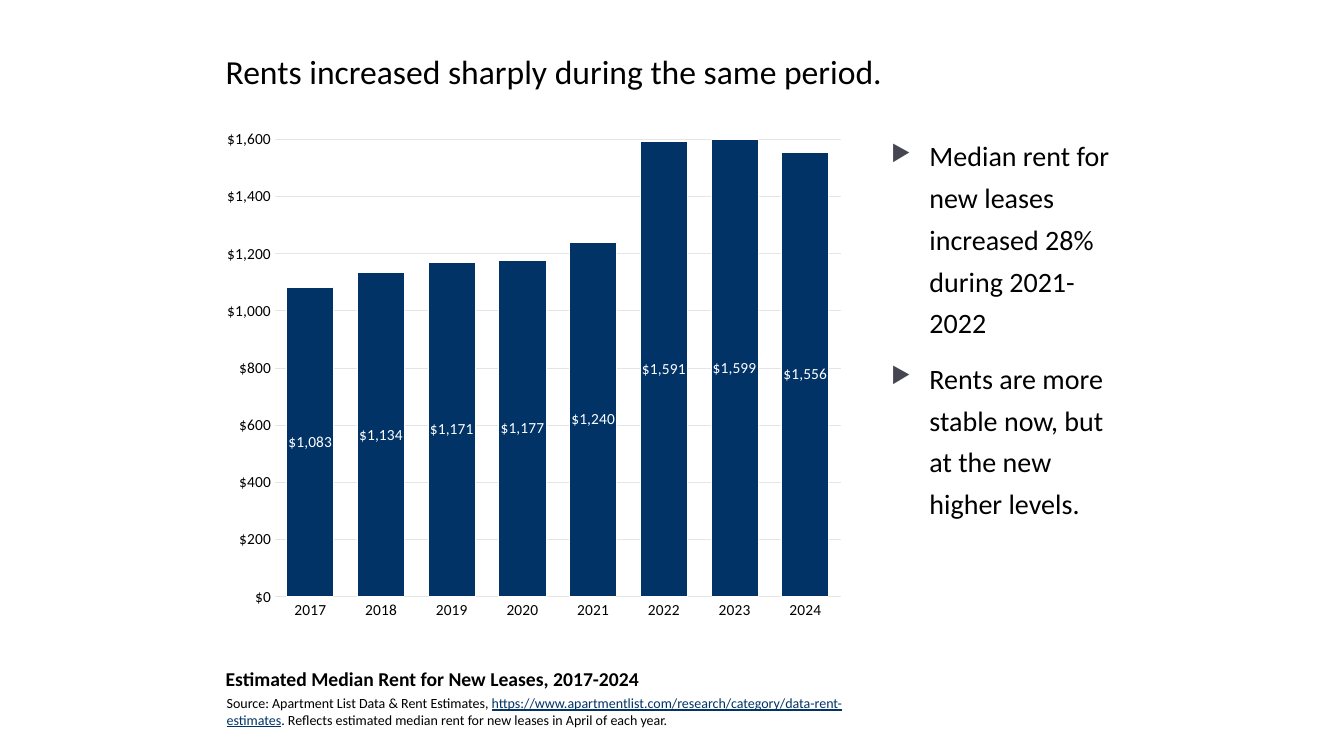
import pptx
import pptx.chart.data
import pptx.dml.color
import pptx.enum.chart
import pptx.enum.text
import pptx.oxml
import pptx.oxml.ns
import pptx.util
from lxml import etree

Inches = pptx.util.Inches
Pt = pptx.util.Pt
qn = pptx.oxml.ns.qn


def color(code):
    return pptx.dml.color.RGBColor.from_string(code)


class Deck:
    face = "Calibri"
    ink = "000000"
    navy = "023366"
    white = "FFFFFF"
    grid = "E5E5E5"
    mark = "464653"

    def __init__(self):
        self.show = pptx.Presentation()
        self.show.slide_width = Inches(13.33)
        self.show.slide_height = Inches(7.5)
        self.slide = self.show.slides.add_slide(self.show.slide_layouts[6])

    def style(self, font, size, shade=None, bold=False):
        font.name = self.face
        font.size = Pt(size)
        font.bold = bold
        font.color.rgb = color(shade or self.ink)

    def frame(self, spot):
        box = self.slide.shapes.add_textbox(*map(Inches, spot))
        box.text_frame.word_wrap = True
        return box.text_frame

    def text(self, spot, words, size, bold=False, space=1.0, middle=False):
        frame = self.frame(spot)
        if middle:
            frame.vertical_anchor = pptx.enum.text.MSO_ANCHOR.MIDDLE
        para = frame.paragraphs[0]
        para.text = words
        para.line_spacing = space
        self.style(para.font, size, bold=bold)

    def source(self, spot, parts, size):
        para = self.frame(spot).paragraphs[0]
        for words, link in parts:
            run = para.add_run()
            run.text = words
            self.style(run.font, size, self.navy if link else self.ink)
            run.font.underline = link

    def bullets(self, spot, items, size):
        frame = self.frame(spot)
        for rank, words in enumerate(items):
            para = frame.add_paragraph() if rank else frame.paragraphs[0]
            para.text = words
            para.line_spacing = 1.24
            if rank:
                para.space_before = Pt(10)
            props = para._p.get_or_add_pPr()
            props.set("marL", str(Inches(0.38)))
            props.set("indent", str(Inches(-0.38)))
            tint = etree.SubElement(props, qn("a:buClr"))
            etree.SubElement(tint, qn("a:srgbClr"), val=self.mark)
            etree.SubElement(props, qn("a:buSzPct"), val="80000")
            etree.SubElement(props, qn("a:buChar"), char="▶")
            self.style(para.font, size)

    def axis(self, axis):
        axis.major_tick_mark = pptx.enum.chart.XL_TICK_MARK.NONE
        axis.minor_tick_mark = pptx.enum.chart.XL_TICK_MARK.NONE
        axis.format.line.fill.background()
        self.style(axis.tick_labels.font, 11)

    def columns(self, spot, years, rents, area):
        data = pptx.chart.data.CategoryChartData()
        data.categories = years
        data.add_series("Series 1", rents)
        kind = pptx.enum.chart.XL_CHART_TYPE.COLUMN_CLUSTERED
        chart = self.slide.shapes.add_chart(
            kind, *map(Inches, spot), data).chart
        chart.has_legend = False
        chart.has_title = False
        self.style(chart.font, 11)
        self.axis(chart.category_axis)

        scale = chart.value_axis
        self.axis(scale)
        scale.minimum_scale = 0
        scale.maximum_scale = 1600
        scale.major_unit = 200
        scale.tick_labels.number_format = '"$"#,##0'
        scale.tick_labels.number_format_is_linked = False
        line = scale.major_gridlines.format.line
        line.color.rgb = color(self.grid)
        line.width = Pt(0.75)

        plot = chart.plots[0]
        plot.gap_width = 50
        plot.vary_by_categories = False
        bars = plot.series[0].format
        bars.fill.solid()
        bars.fill.fore_color.rgb = color(self.navy)
        bars.line.color.rgb = color(self.white)
        bars.line.width = Pt(0.75)

        labels = plot.series[0].data_labels
        labels.show_value = True
        labels.position = pptx.enum.chart.XL_LABEL_POSITION.CENTER
        labels.number_format = '"$"#,##0'
        labels.number_format_is_linked = False
        self.style(labels.font, 11, self.white)
        self.layout(chart, area)

    def layout(self, chart, area):
        home = chart._chartSpace.chart.plotArea
        for old in home.findall(qn("c:layout")):
            home.remove(old)
        outer = etree.Element(qn("c:layout"))
        home.insert(0, outer)
        inner = etree.SubElement(outer, qn("c:manualLayout"))
        tags = ("layoutTarget", "xMode", "yMode", "x", "y", "w", "h")
        for tag, value in zip(tags, ("inner", "edge", "edge", *area)):
            etree.SubElement(inner, qn("c:" + tag), val=str(value))


def main():
    deck = Deck()
    deck.text((2.14, 0.38, 9.26, 0.7),
              "Rents increased sharply during the same period.",
              24, space=0.9, middle=True)
    deck.source((2.15, 6.84, 6.75, 0.44), [
        ("Source: Apartment List Data & Rent Estimates, ", False),
        ("https://www.apartmentlist.com/research/category/data-rent-estimates",
         True),
        (". Reflects estimated median rent for new leases in April "
         "of each year.", False),
    ], 10)
    deck.text((2.14, 6.54, 6.96, 0.35),
              "Estimated Median Rent for New Leases, 2017-2024",
              14, bold=True, space=1.12)
    deck.columns((2.06, 1.01, 6.68, 5.34),
                 [str(year) for year in range(2017, 2025)],
                 (1083, 1134, 1171, 1177, 1240, 1591, 1599, 1556),
                 (0.1, 0.07, 0.84, 0.85))
    deck.bullets((8.74, 1.25, 2.51, 5), [
        "Median rent for new leases increased 28% during 2021-2022",
        "Rents are more stable now, but at the new higher levels.",
    ], 20)
    deck.show.save("out.pptx")


if __name__ == "__main__":
    main()
